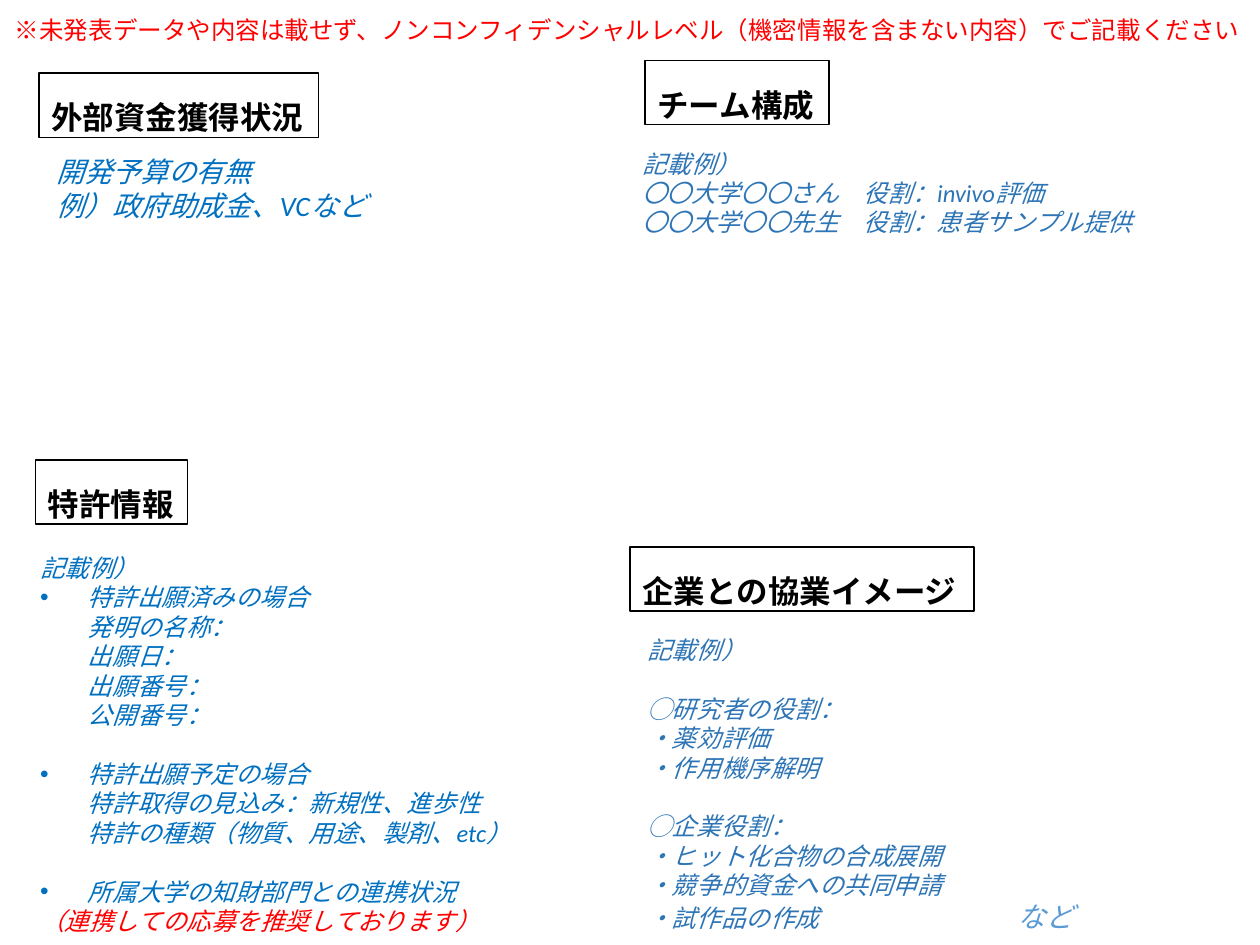
from dataclasses import dataclass

from lxml import etree
from pptx import Presentation
from pptx.dml.color import RGBColor
from pptx.enum.shapes import MSO_SHAPE
from pptx.enum.text import MSO_ANCHOR, MSO_AUTO_SIZE, PP_ALIGN
from pptx.oxml.ns import qn
from pptx.util import Inches, Pt

RECTANGLE = MSO_SHAPE.RECTANGLE
TOP = MSO_ANCHOR.TOP
GROW = MSO_AUTO_SIZE.SHAPE_TO_FIT_TEXT
LEFT = PP_ALIGN.LEFT


@dataclass(frozen=True)
class Theme:
    """Colours, fonts and type sizes of the slide."""
    black: RGBColor = RGBColor(0x00, 0x00, 0x00)
    red: RGBColor = RGBColor(0xFF, 0x00, 0x00)
    blue: RGBColor = RGBColor(0x00, 0x70, 0xC0)
    steel: RGBColor = RGBColor(0x2E, 0x75, 0xB6)
    pale: RGBColor = RGBColor(0x5B, 0x9B, 0xD5)
    heading_font: str = "Arial"
    latin_font: str = "Calibri"
    japanese_font: str = "Noto Sans CJK JP"
    heading_size: Pt = Pt(18)
    large_size: Pt = Pt(16)
    body_size: Pt = Pt(14)
    section_gap: Pt = Pt(16.8)
    indent: Inches = Inches(0.38)
    tab: Inches = Inches(2.94)


THEME = Theme()


@dataclass(frozen=True)
class Line:
    """One line of body text with its layout."""
    text: str
    gap: bool = False
    bullet: bool = False
    indented: bool = False
    color: RGBColor | None = None
    tail: str = ""


FUNDING = [Line("開発予算の有無"), Line("例）政府助成金、VCなど")]
TEAM = [
    Line("記載例）"),
    Line("〇〇大学〇〇さん　役割：invivo評価"),
    Line("〇〇大学〇〇先生　役割：患者サンプル提供"),
]
PATENTS = [
    Line("記載例）"),
    Line("特許出願済みの場合", bullet=True),
    Line("発明の名称：", indented=True),
    Line("出願日：", indented=True),
    Line("出願番号：", indented=True),
    Line("公開番号：", indented=True),
    Line("特許出願予定の場合", gap=True, bullet=True),
    Line("特許取得の見込み：新規性、進歩性", indented=True),
    Line("特許の種類（物質、用途、製剤、etc）", indented=True),
    Line("所属大学の知財部門との連携状況", gap=True, bullet=True),
    Line("（連携しての応募を推奨しております）", color=THEME.red),
]
COLLABORATION = [
    Line("記載例）"),
    Line("◯研究者の役割：", gap=True),
    Line("・薬効評価"),
    Line("・作用機序解明"),
    Line("◯企業役割：", gap=True),
    Line("・ヒット化合物の合成展開"),
    Line("・競争的資金への共同申請"),
    Line("・試作品の作成", tail="など"),
]


def style_font(font, name, size, color):
    """Set the face, size and colour of a font."""
    font.name = name
    font.size = size
    font.color.rgb = color


def add_notice(slide, box, text):
    """Place the red notice on one line."""
    frame = slide.shapes.add_textbox(*map(Inches, box)).text_frame
    frame.word_wrap = False
    frame.auto_size = GROW
    paragraph = frame.paragraphs[0]
    paragraph.text = text
    style_font(paragraph.font, THEME.latin_font, THEME.body_size, THEME.red)


def add_heading(slide, box, text):
    """Place a framed section heading."""
    shape = slide.shapes.add_shape(RECTANGLE, *map(Inches, box))
    shape.shadow.inherit = False
    shape.fill.background()
    shape.line.color.rgb = THEME.black
    shape.line.width = Pt(0.75)
    frame = shape.text_frame
    frame.word_wrap = False
    frame.auto_size = GROW
    frame.vertical_anchor = TOP
    paragraph = frame.paragraphs[0]
    paragraph.text = text
    paragraph.alignment = LEFT
    paragraph.line_spacing = 1.5
    paragraph.font.bold = True
    style_font(paragraph.font, THEME.heading_font, THEME.heading_size, THEME.black)


def format_line(paragraph, line, size, color):
    """Write one body line with its indent, bullet, gap and font."""
    paragraph.text = line.text
    properties = paragraph._p.get_or_add_pPr()
    if line.gap:
        paragraph.space_before = THEME.section_gap
    if line.bullet or line.indented:
        properties.set("marL", str(THEME.indent))
        properties.set("indent", str(-THEME.indent if line.bullet else 0))
    if line.bullet:
        etree.SubElement(properties, qn("a:buFont"), typeface="Arial")
        etree.SubElement(properties, qn("a:buChar"), char="•")
    if line.tail:
        tabs = etree.SubElement(properties, qn("a:tabLst"))
        etree.SubElement(tabs, qn("a:tab"), pos=str(THEME.tab), algn="l")
        run = paragraph.add_run()
        run.text = "\t" + line.tail
        run.font.size = THEME.large_size
        run.font.color.rgb = THEME.pale
    paragraph.font.italic = True
    style_font(paragraph.font, THEME.latin_font, size, line.color or color)
    defaults = properties.find(qn("a:defRPr"))
    etree.SubElement(defaults, qn("a:ea"), typeface=THEME.japanese_font)


def add_body(slide, box, lines, size, color):
    """Place the example text of a section."""
    frame = slide.shapes.add_textbox(*map(Inches, box)).text_frame
    frame.word_wrap = True
    for index, line in enumerate(lines):
        paragraph = frame.add_paragraph() if index else frame.paragraphs[0]
        format_line(paragraph, line, size, color)


def add_section(slide, heading, heading_box, lines, body_box, size, color):
    """Place a heading and the text that belongs to it."""
    add_heading(slide, heading_box, heading)
    add_body(slide, body_box, lines, size, color)


def main():
    """Build and save the slide."""
    presentation = Presentation()
    presentation.slide_width, presentation.slide_height = Inches(10), Inches(7.5)
    slide = presentation.slides.add_slide(presentation.slide_layouts[6])
    sections = [
        ("特許情報", (0.28, 3.65, 1.21, 0.51), PATENTS,
         (0.22, 4.34, 4.57, 3.16), THEME.body_size, THEME.blue),
        ("外部資金獲得状況", (0.31, 0.58, 2.22, 0.51), FUNDING,
         (0.35, 1.18, 4.31, 1.99), THEME.large_size, THEME.blue),
        ("企業との協業イメージ", (5, 4.34, 2.73, 0.51), COLLABORATION,
         (5.04, 4.99, 4.57, 4.64), THEME.body_size, THEME.steel),
        ("チーム構成", (5.12, 0.48, 1.46, 0.51), TEAM,
         (5, 1.13, 4.57, 2.69), THEME.body_size, THEME.steel),
    ]
    for section in sections:
        add_section(slide, *section)
    add_notice(
        slide, (0.02, 0.07, 10.02, 0.34),
        "※未発表データや内容は載せず、ノンコンフィデンシャルレベル"
        "（機密情報を含まない内容）でご記載ください")
    presentation.save("out.pptx")


if __name__ == "__main__":
    main()
